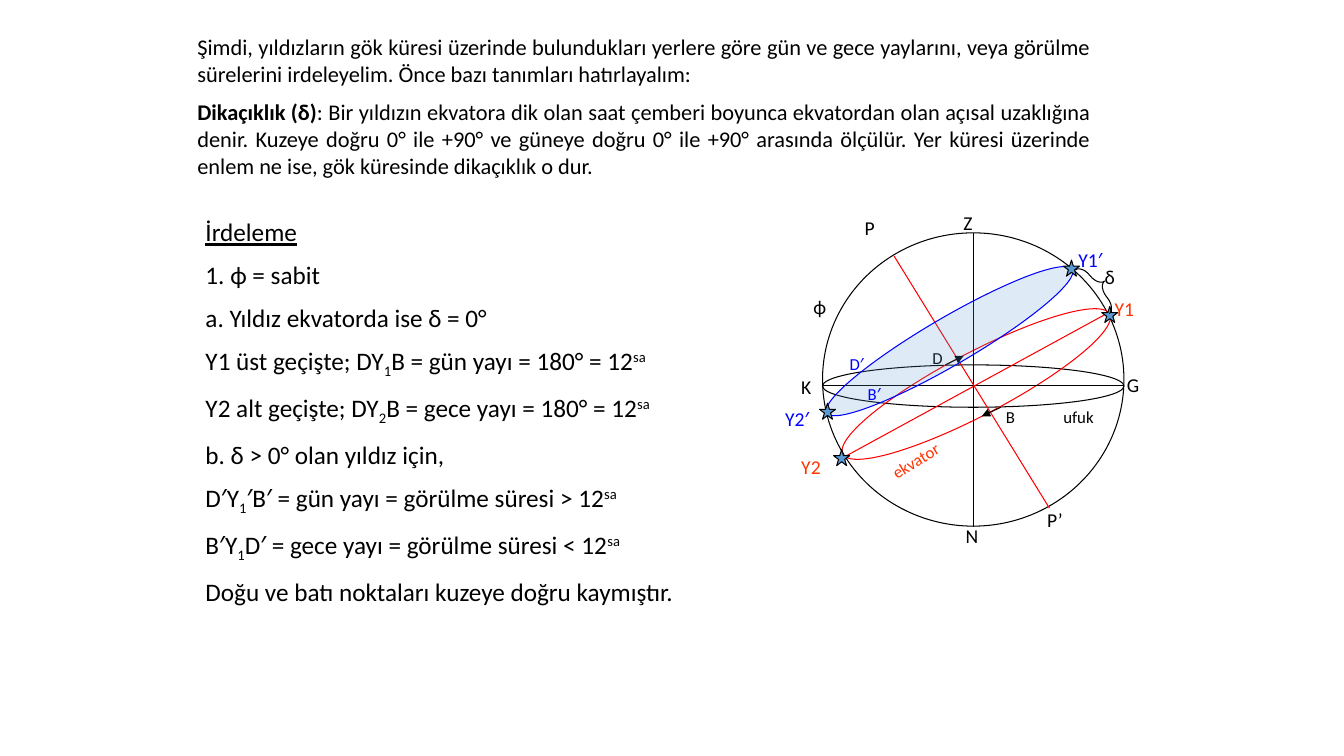
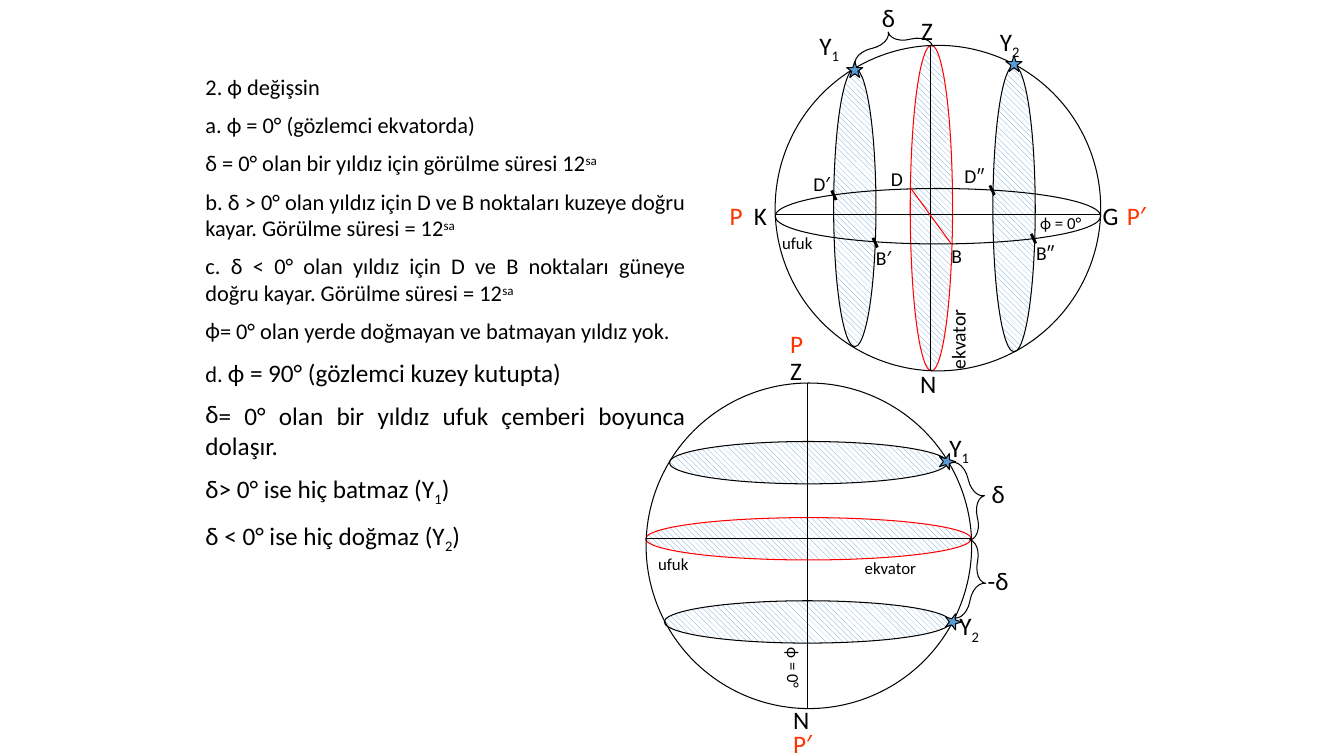
from dataclasses import dataclass

from lxml import etree
from pptx import Presentation, util as u
from pptx.dml.color import RGBColor
from pptx.enum import dml, shapes, text
from pptx.oxml import ns


@dataclass(frozen=True)
class Theme:
    font: str = "Calibri"
    ink: str = "000000"
    red: str = "FF0000"
    orange: str = "FF3300"
    blue: str = "0000FF"
    sky: str = "5B9BD5"
    white: str = "FFFFFF"
    small: int = 12
    label: int = 14
    body: int = 16
    large: int = 18
    thin: float = 0.75
    thick: float = 2
    cell: float = 0.1
    columns: float = 133.33
    rows: float = 75


T = Theme()
S = shapes.MSO_SHAPE
MARKS = {
    "_": {"baseline": "-25000"},
    "^": {"baseline": "30000"},
    "*": {"bold": True},
    "~": {"underline": True},
    "+": {"size": u.Pt(T.large)},
}
LABEL_ROWS = {T.small: 3, T.label: 3.3, T.large: 4}


def grid(n):
    return u.Inches(n * T.cell)


def rgb(colour):
    return RGBColor.from_string(colour)


def add(parent, tag, **attrs):
    return etree.SubElement(parent, ns.qn(tag), attrs)


class Deck:
    def __init__(self):
        self.prs = Presentation()
        self.prs.slide_width = grid(T.columns)
        self.prs.slide_height = grid(T.rows)
        self.s = None

    def slide(self):
        self.s = self.prs.slides.add_slide(self.prs.slide_layouts[6])

    def shape(self, kind, x, y, w, h, rot=0, line=T.ink, fill=None, alpha=None, hatch=False, adj=()):
        sp = self.s.shapes.add_shape(kind, *map(grid, (x, y, w, h)))
        sp.shadow.inherit = False
        sp.rotation = rot
        sp.line.color.rgb = rgb(line)
        sp.line.width = u.Pt(T.thin)
        for i, value in enumerate(adj):
            sp.adjustments[i] = value
        if hatch:
            sp.fill.patterned()
            sp.fill.pattern = dml.MSO_PATTERN.WIDE_DOWNWARD_DIAGONAL
            sp.fill.fore_color.rgb = rgb(T.sky)
            sp.fill.back_color.rgb = rgb(T.white)
        elif fill:
            sp.fill.solid()
            sp.fill.fore_color.rgb = rgb(fill)
            if alpha:
                colour = sp._element.spPr.find(ns.qn("a:solidFill"))[0]
                add(colour, "a:alpha", val=str(alpha * 1000))
        else:
            sp.fill.background()

    def ellipse(self, x, y, w, h, **style):
        self.shape(S.OVAL, x, y, w, h, **style)

    def stars(self, *places, rot=0):
        for x, y in places:
            self.shape(S.STAR_5_POINT, x, y, 1.6, 1.6, rot=rot, fill=T.sky)

    def brace(self, x, y, rot):
        self.shape(S.LEFT_BRACE, x, y, 2.4, 7.9, rot=rot, adj=(0.79, 0.5))

    def line(self, x1, y1, x2, y2, colour=T.ink, width=T.thin, arrow=False):
        ln = self.s.shapes.add_connector(shapes.MSO_CONNECTOR.STRAIGHT, *map(grid, (x1, y1, x2, y2)))
        ln.line.color.rgb = rgb(colour)
        ln.line.width = u.Pt(width)
        if arrow:
            add(ln.line._get_or_add_ln(), "a:tailEnd", type="triangle")
        add(ln._element.spPr, "a:effectLst")

    def runs(self, p, marked, size, colour):
        for part in filter(None, marked.split("|")):
            mark = MARKS.get(part[0], {})
            r = p.add_run()
            r.text = part[1:] if mark else part
            values = {"name": T.font, "size": u.Pt(size), **mark}
            baseline = values.pop("baseline", None)
            for name, value in values.items():
                setattr(r.font, name, value)
            r.font.color.rgb = rgb(colour)
            if baseline:
                r._r.get_or_add_rPr().set("baseline", baseline)

    def frame(self, x, y, w, h, rot=0):
        sp = self.s.shapes.add_textbox(*map(grid, (x, y, w, h)))
        sp.rotation = rot
        tf = sp.text_frame
        tf.word_wrap = True
        tf.auto_size = text.MSO_AUTO_SIZE.SHAPE_TO_FIT_TEXT
        return tf

    def label(self, words, x, y, w=3.9, size=T.label, colour=T.ink, rot=0):
        tf = self.frame(x, y, w, LABEL_ROWS[size], rot)
        self.runs(tf.paragraphs[0], words, size, colour)

    def labels(self, *items, **style):
        for item in items:
            self.label(*item, **style)

    def prose(self, x, y, w, h, paragraphs):
        tf = self.frame(x, y, w, h)
        for i, (words, size, bullet) in enumerate(paragraphs):
            p = tf.add_paragraph() if i else tf.paragraphs[0]
            p.alignment = text.PP_ALIGN.JUSTIFY
            if i:
                p.space_before = u.Pt((T.large if "|+" in words else size) / 2)
            if bullet:
                pPr = p._p.get_or_add_pPr()
                pPr.set("marL", "0")
                pPr.set("indent", "0")
                add(pPr, "a:buFont", typeface=T.font)
                add(pPr, "a:buChar", char=bullet)
            self.runs(p, words, size, T.ink)


def plain(size, *lines):
    return [(words, size, None) for words in lines]


def declination(d):
    d.slide()
    d.ellipse(81.6, 23.1, 29.9, 29.1)
    d.ellipse(81.6, 36.2, 29.9, 4.2)
    d.ellipse(81.9, 35, 29.9, 6.2, rot=332.3, line=T.red)
    d.line(96.6, 23.1, 96.6, 52.3)
    d.line(81.6, 38.2, 111.5, 38.2)
    d.line(84, 45.2, 110, 31, T.red)
    d.line(88.7, 25.4, 104.1, 50.4, T.red)
    d.labels(("Z", 94.6, 20.4), ("N", 94.8, 51.5), ("K", 78.5, 36.7), ("G", 110.8, 36.5),
             ("P", 84.8, 20.9), ("P’", 102.9, 49.9), ("ϕ", 79.7, 28.8))
    d.labels(("D", 91.5, 34, 3.2), ("B", 98.8, 39.9, 3.2), ("ufuk", 104.5, 39.9, 6.3), size=T.small)
    d.line(93.8, 36.2, 95.6, 35.3, arrow=True)
    d.line(99.3, 40.4, 97.4, 41.3, arrow=True)
    d.label("ekvator", 87.2, 43.9, 8.2, T.small, T.orange, 328.4)
    d.prose(18.6, 2.8, 90.6, 15.7, plain(
        T.body,
        "Şimdi, yıldızların gök küresi üzerinde bulundukları yerlere göre gün ve gece yaylarını, "
        "veya görülme sürelerini irdeleyelim. Önce bazı tanımları hatırlayalım:",
        "*Dikaçıklık (δ)|: Bir yıldızın ekvatora dik olan saat çemberi boyunca ekvatordan olan açısal "
        "uzaklığına denir. Kuzeye doğru 0° ile +90° ve güneye doğru 0° ile +90° arasında ölçülür. "
        "Yer küresi üzerinde enlem ne ise, gök küresinde dikaçıklık o dur.",
    ))
    d.prose(19.4, 21, 55.1, 40.1, plain(
        T.large,
        "~İrdeleme",
        "1. ϕ = sabit",
        "a. Yıldız ekvatorda ise δ = 0°",
        "Y1 üst geçişte; DY|_1|B = gün yayı = 180° = 12|^sa",
        "Y2 alt geçişte; DY|_2|B = gece yayı = 180° = 12|^sa",
        "b. δ > 0° olan yıldız için,",
        "D′Y|_1|′B′ = gün yayı = görülme süresi > 12|^sa",
        "B′Y|_1|D′ = gece yayı = görülme süresi < 12|^sa",
        "Doğu ve batı noktaları kuzeye doğru kaymıştır.",
    ))
    d.ellipse(80.1, 31.5, 28.2, 4.7, rot=329.7, line=T.blue, fill=T.sky, alpha=20)
    d.stars((105.5, 25.8), (81.3, 40), (82.7, 44.6), (109.3, 30.4))
    d.labels(("Y2′", 76.9, 39.9), ("Y1′", 106, 24.1), w=5.5, colour=T.blue)
    d.labels(("D′", 83.3, 34.6), ("B′", 85.1, 37.6), w=3.7, size=T.small, colour=T.blue)
    d.labels(("Y2", 78.5, 44.6), ("Y1", 109.6, 29), w=5.5, colour=T.orange)
    d.shape(S.RIGHT_BRACE, 108.2, 25.7, 1.6, 5.5, rot=322, adj=(0.843, 0.484))
    d.label("δ", 108.6, 25.8)


def equator_sphere(d):
    for x, y, h, line in ((98.5, 6.5, 28.4, T.ink), (90.3, 4.5, 32.3, T.red), (82.7, 6.8, 27.6, T.ink)):
        d.ellipse(x, y, 4.2, h, line=line, hatch=True)
    d.ellipse(76.9, 4.5, 32.3, 32.3)
    d.ellipse(76.9, 18.7, 32.3, 5.5)
    d.line(76.9, 21.3, 109.2, 21.3)
    d.line(92.3, 4.5, 92.3, 36.8)
    d.line(90.3, 18.6, 94.3, 24.1, T.red)
    for x, y in ((98.2, 18.4), (102.3, 23.2), (82.5, 18.9), (86.6, 23.6)):
        d.line(x + 0.45, y + 0.95, x, y, width=T.thick)
    d.labels(("Z", 90.4, 1), ("N", 90.3, 36), ("K", 73.8, 19.4), ("G", 108.4, 19.4),
             ("Y|_1", 80.3, 2.5, 5.5), ("Y|_2", 98.2, 2.1, 5.5), ("δ", 86.5, -0.3, 3.2), size=T.large)
    d.labels(("D", 87.4, 16.1), ("B′", 85.9, 23.9), ("D′", 79.7, 16.6), ("B", 93.4, 23.7),
             ("D″", 94.7, 15.8, 5), ("B″", 101.8, 23.4, 4.8))
    d.labels(("P", 71.4, 19.4), ("P′", 110.8, 19.4, 4.4), size=T.large, colour=T.orange)
    d.labels(("ϕ = 0°", 102.2, 20.6, 7.1), ("ufuk", 76.6, 22.6, 6.3), size=T.small)
    d.label("ekvator", 88.5, 29.5, 13, rot=270)
    d.stars((84, 6.1), (99.8, 5.5))
    d.brace(87.2, 0.4, 76.5)


def pole_sphere(d):
    for x, y, h, line in ((78, 47.5, 28.4, T.ink), (78.1, 37.3, 32.3, T.red), (78.1, 32.1, 27.6, T.ink)):
        d.ellipse(x, y, 4.2, h, rot=90, line=line, hatch=True)
    d.ellipse(64.1, 38, 32.3, 32.3)
    d.line(80.1, 38, 80.1, 70.2)
    d.line(96.4, 53.4, 64.1, 53.4)
    d.labels(("Z", 77.4, 34.8), ("N", 77.7, 69.4), ("Y|_1", 93.2, 42.4, 5.5), ("Y|_2", 94.2, 60.1, 5.5),
             ("δ", 97.4, 47, 3.2), ("-δ", 97, 55.6, 4.7), size=T.large)
    d.labels(("P", 77.4, 32.1), ("P′", 77.7, 71.8, 4.4), size=T.large, colour=T.orange)
    d.labels(("ekvator", 84.8, 54.8, 13), ("ufuk", 64.3, 54.4, 6.3), size=T.small)
    d.label("ϕ = 0°", 75.2, 65.3, 7.1, T.small, rot=90)
    d.stars((93.2, 45), (93.8, 60.9), rot=90)
    d.brace(95.3, 45.5, 166.5)
    d.brace(95.4, 53.7, 190.9)


def latitude(d):
    d.slide()
    equator_sphere(d)
    d.prose(19.4, 6.8, 49.6, 50.5, [
        *plain(
            T.body,
            "2. ϕ değişsin",
            "a. ϕ = 0° (gözlemci ekvatorda)",
            "δ = 0° olan bir yıldız için görülme süresi 12|^sa",
            "b. δ > 0° olan yıldız için D ve B noktaları kuzeye doğru kayar. Görülme süresi = 12|^sa",
            "c. δ < 0° olan yıldız için D ve B noktaları güneye doğru kayar. Görülme süresi = 12|^sa",
        ),
        ("= 0° olan yerde doğmayan ve batmayan yıldız yok.", T.body, "ϕ"),
        ("d. |+ϕ = 90° (gözlemci kuzey kutupta)", T.body, None),
        ("= 0° olan bir yıldız ufuk çemberi boyunca dolaşır.", T.large, "δ"),
        ("> 0° ise hiç batmaz (Y|_1|)", T.large, "δ"),
        ("δ < 0° ise hiç doğmaz (Y|_2|)", T.large, None),
    ])
    pole_sphere(d)


def main():
    d = Deck()
    declination(d)
    latitude(d)
    d.prs.save("out.pptx")


if __name__ == "__main__":
    main()
